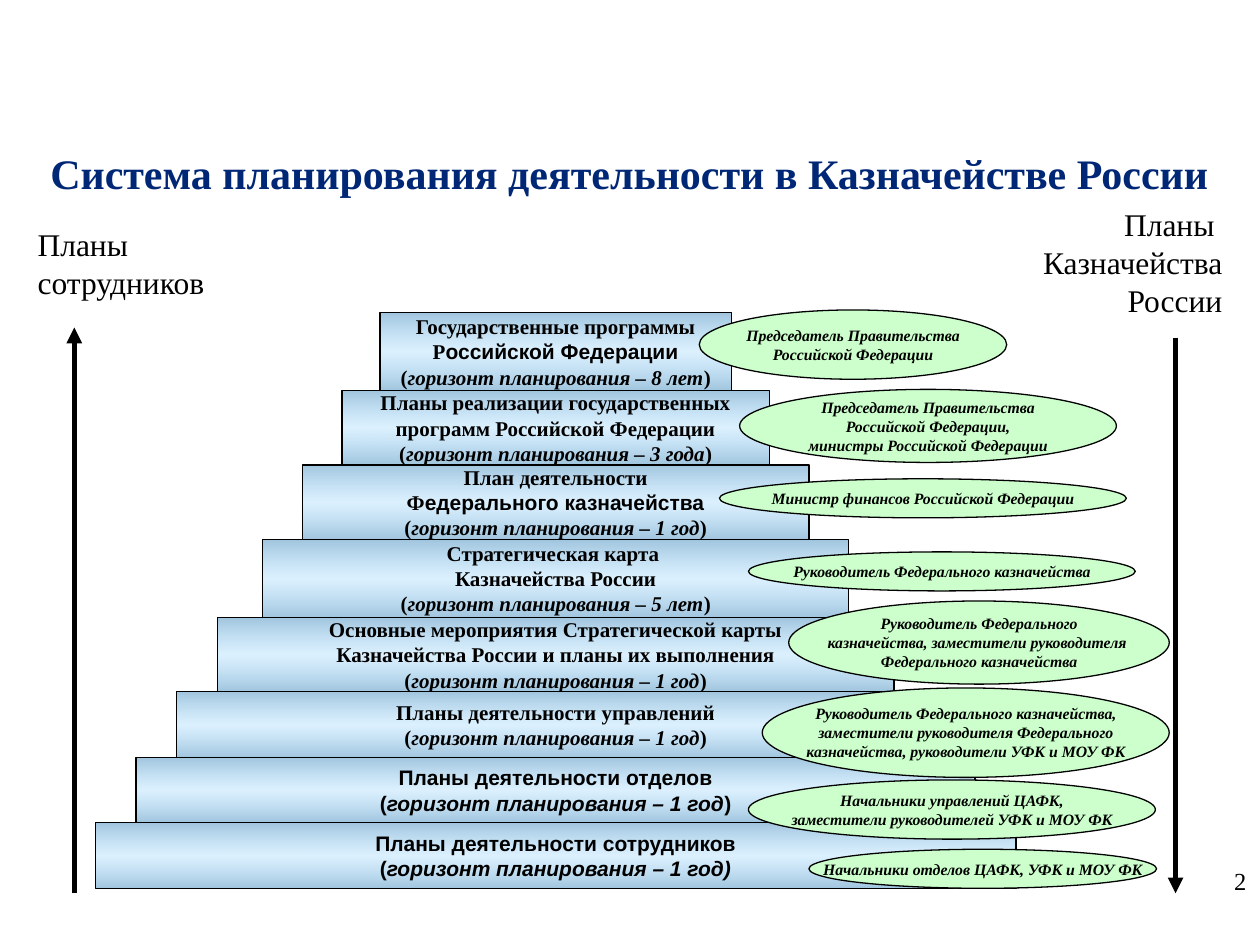
from dataclasses import dataclass

from lxml import etree
from pptx import Presentation
from pptx import util as u
from pptx.dml.color import RGBColor
from pptx.enum import shapes, text
from pptx.oxml import ns, parse_xml

CELL = u.Inches(0.1)
COLUMNS, ROWS = 100, 75
SERIF, SANS = "Times New Roman", "Arial"
BLACK, NAVY, GREEN = "000000", "002776", "CCFFCC"
GRADIENT = ((0, "A1C5DE", 100), (50, "B8E2FE", 48), (100, "A1C5DE", 100))
PYRAMID_CENTER, PYRAMID_TOP = 44.1, 24.8
LEFT, CENTER, RIGHT = (text.PP_ALIGN.LEFT, text.PP_ALIGN.CENTER, text.PP_ALIGN.RIGHT)
TOP, MIDDLE = text.MSO_ANCHOR.TOP, text.MSO_ANCHOR.MIDDLE


@dataclass(frozen=True)
class Run:
    text: str
    font: str = SERIF
    italic: bool = False


@dataclass(frozen=True)
class Box:
    left: float
    top: float
    width: float
    height: float

    def place(self) -> list:
        return [round(value * CELL) for value in (self.left, self.top, self.width, self.height)]


@dataclass(frozen=True)
class Level:
    width: float
    height: float
    lines: list


@dataclass(frozen=True)
class Owner:
    box: Box
    lines: list


@dataclass(frozen=True)
class Label:
    box: Box
    text: str
    size: int
    align: int
    color: str = BLACK
    bold: bool = False
    anchor: int = TOP


@dataclass(frozen=True)
class Arrow:
    column: float
    start: float
    end: float


def horizon(term: str, font: str = SERIF, closing_italic: bool = False) -> list:
    return [Run("(", font), Run(f"горизонт планирования – {term}", font, True),
            Run(")", font, closing_italic)]


LEVELS = [
    Level(27.9, 6.2, [[Run("Государственные программы")],
                      [Run("Р"), Run("оссийской Федерации", SANS)], horizon("8 лет")]),
    Level(33.9, 5.9, [[Run("Планы реализации государственных")],
                      [Run("программ Российской Федерации")], horizon("3 года")]),
    Level(40.2, 5.9, [[Run("План деятельности")],
                      [Run("Ф"), Run("едерального казначейства", SANS)], horizon("1 год")]),
    Level(46.5, 6.2, [[Run("Стратегическая карта ")],
                      [Run("Казначейства России")], horizon("5 лет")]),
    Level(53.7, 5.9, [[Run("Основные мероприятия Стратегической карты")],
                      [Run("Казначейства России и планы их выполнения")], horizon("1 год")]),
    Level(60.2, 5.2, [[Run("Планы деятельности управлений")], horizon("1 год")]),
    Level(66.6, 5.2, [[Run("Планы деятельности отделов", SANS)], horizon("1 год", SANS)]),
    Level(73.1, 5.2, [[Run("Планы деятельности сотрудников", SANS)],
                      horizon("1 год", SANS, True)]),
]
OWNERS = [
    Owner(Box(55.5, 24.6, 24.4, 5.5), ["Председатель Правительства", "Российской Федерации"]),
    Owner(Box(58.7, 30.9, 29.9, 5.8), ["Председатель Правительства", "Российской Федерации,",
                                       "министры Российской Федерации"]),
    Owner(Box(57.1, 38, 32.3, 3.1), ["Министр финансов Российской Федерации"]),
    Owner(Box(59.4, 43.8, 30.7, 3.1), ["Руководитель Федерального казначейства"]),
    Owner(Box(62.6, 47.7, 30.2, 6.6), ["Руководитель Федерального",
                                       "казначейства, заместители руководителя ",
                                       "Федерального казначейства"]),
    Owner(Box(60.5, 54.6, 32.3, 7.1), ["Руководитель Федерального казначейства,",
                                       "заместители руководителя Федерального",
                                       "казначейства, руководители УФК и МОУ ФК"]),
    Owner(Box(59.4, 61.9, 32.3, 4.7), ["Начальники управлений ЦАФК,",
                                       "заместители руководителей УФК и МОУ ФК"]),
    Owner(Box(64.2, 67.4, 27.6, 3.1), ["Начальники отделов ЦАФК, УФК и МОУ ФК"]),
]
LABELS = [
    Label(Box(2, 17.4, 18.9, 7.1), "Планы сотрудников", 18, LEFT),
    Label(Box(79.9, 15.8, 18.1, 10.1), "Планы \vКазначейства России", 18, RIGHT),
    Label(Box(2.7, 12.3, 94.5, 2.8), "Система планирования деятельности в Казначействе России",
          24, CENTER, NAVY, True, MIDDLE),
    Label(Box(95.2, 68.2, 4.7, 5.2), "2", 14, RIGHT),
]
ARROWS = [Arrow(5.9, 70.9, 26), Arrow(93.3, 26.8, 70.9)]


def rgb(color: str) -> RGBColor:
    return RGBColor.from_string(color)


def set_format(target, values: dict) -> None:
    for name, value in values.items():
        setattr(target, name, value)


def style_run(run, size: int, color: str, **values) -> None:
    set_format(run.font, {"size": u.Pt(size), **values})
    run.font.color.rgb = rgb(color)


def fill_gradient(shape) -> None:
    stops = "".join(
        f'<a:gs pos="{position * 1000}"><a:srgbClr val="{color}">'
        f'<a:alpha val="{opacity * 1000}"/></a:srgbClr></a:gs>'
        for position, color, opacity in GRADIENT)
    gradient = parse_xml(f'<a:gradFill {ns.nsdecls("a")} rotWithShape="1"><a:gsLst>{stops}'
                         '</a:gsLst><a:lin ang="5400000" scaled="1"/></a:gradFill>')
    shape._element.spPr.find(ns.qn("a:prstGeom")).addnext(gradient)


def add_block(slide, kind, box: Box, lines: list, size: int):
    shape = slide.shapes.add_shape(kind, *box.place())
    shape.shadow.inherit = False
    shape.line.color.rgb = rgb(BLACK)
    shape.line.width = u.Pt(0.75)
    frame = shape.text_frame
    set_format(frame, {"word_wrap": False, "vertical_anchor": MIDDLE})
    for index, runs in enumerate(lines):
        paragraph = frame.add_paragraph() if index else frame.paragraphs[0]
        paragraph.alignment = CENTER
        for part in runs:
            run = paragraph.add_run()
            run.text = part.text
            style_run(run, size, BLACK, name=part.font, bold=True, italic=part.italic)
    return shape


def add_pyramid(slide, levels: list) -> None:
    top = PYRAMID_TOP
    for level in levels:
        box = Box(PYRAMID_CENTER - level.width / 2, top, level.width, level.height)
        fill_gradient(add_block(slide, shapes.MSO_SHAPE.RECTANGLE, box, level.lines, 12))
        top += level.height


def add_owner(slide, owner: Owner) -> None:
    lines = [[Run(line, italic=True)] for line in owner.lines]
    shape = add_block(slide, shapes.MSO_SHAPE.OVAL, owner.box, lines, 9)
    shape.fill.solid()
    shape.fill.fore_color.rgb = rgb(GREEN)


def add_label(slide, label: Label) -> None:
    frame = slide.shapes.add_textbox(*label.box.place()).text_frame
    set_format(frame, {"word_wrap": True, "vertical_anchor": label.anchor})
    paragraph = frame.paragraphs[0]
    set_format(paragraph, {"text": label.text, "alignment": label.align})
    for run in paragraph.runs:
        style_run(run, label.size, label.color, name=SERIF, bold=label.bold)


def add_arrow(slide, arrow: Arrow) -> None:
    column, start, end = (round(value * CELL) for value in (arrow.column, arrow.start, arrow.end))
    connector = slide.shapes.add_connector(shapes.MSO_CONNECTOR.STRAIGHT,
                                           column, start, column, end)
    connector.line.color.rgb = rgb(BLACK)
    connector.line.width = u.Pt(3)
    etree.SubElement(connector.line._get_or_add_ln(), ns.qn("a:tailEnd"), type="triangle")
    etree.SubElement(connector._element.spPr, ns.qn("a:effectLst"))


def main() -> None:
    presentation = Presentation()
    set_format(presentation, {"slide_width": COLUMNS * CELL, "slide_height": ROWS * CELL})
    slide = presentation.slides.add_slide(presentation.slide_layouts[6])
    for arrow in ARROWS:
        add_arrow(slide, arrow)
    add_pyramid(slide, LEVELS)
    for owner in OWNERS:
        add_owner(slide, owner)
    for label in LABELS:
        add_label(slide, label)
    presentation.save("out.pptx")


if __name__ == "__main__":
    main()
